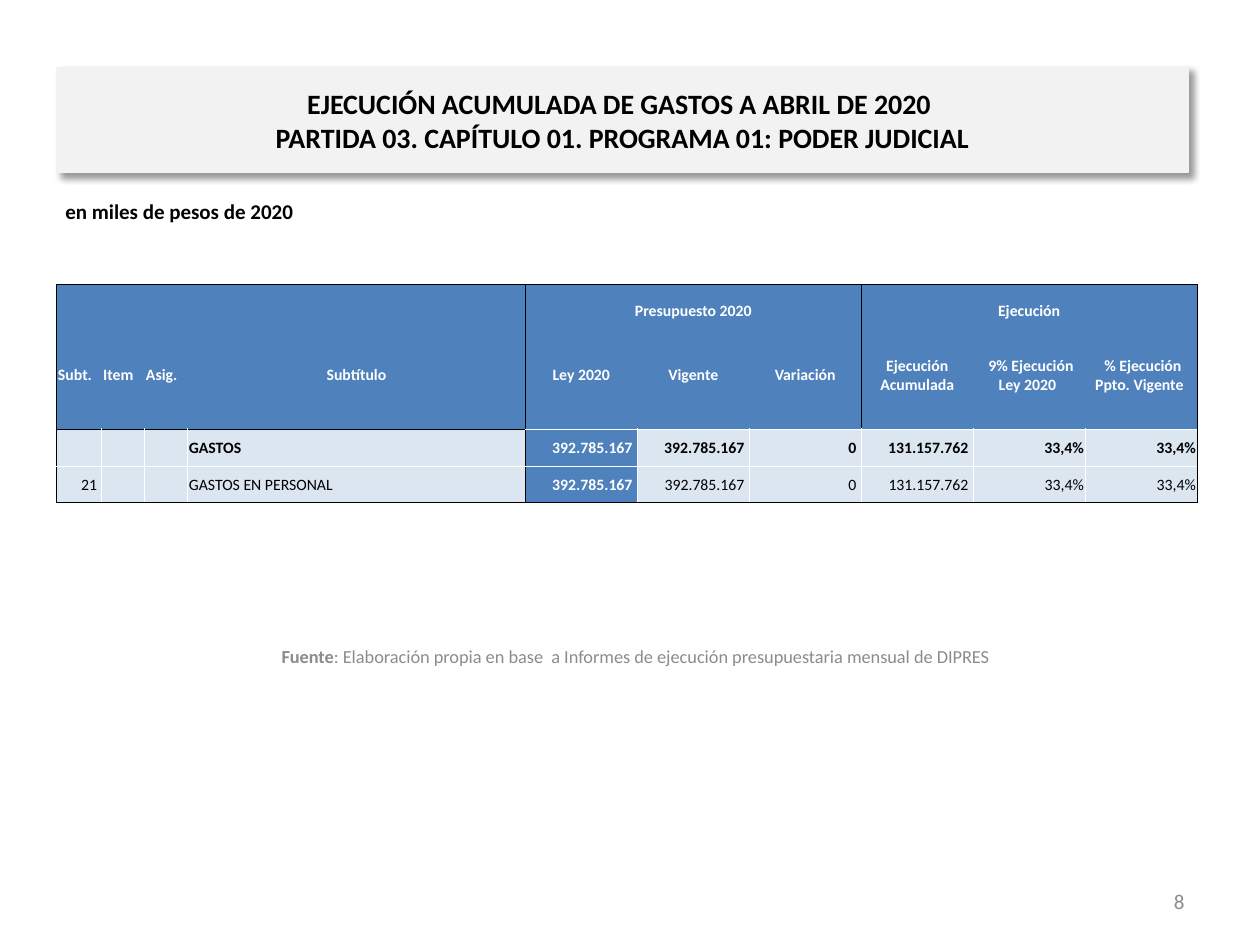
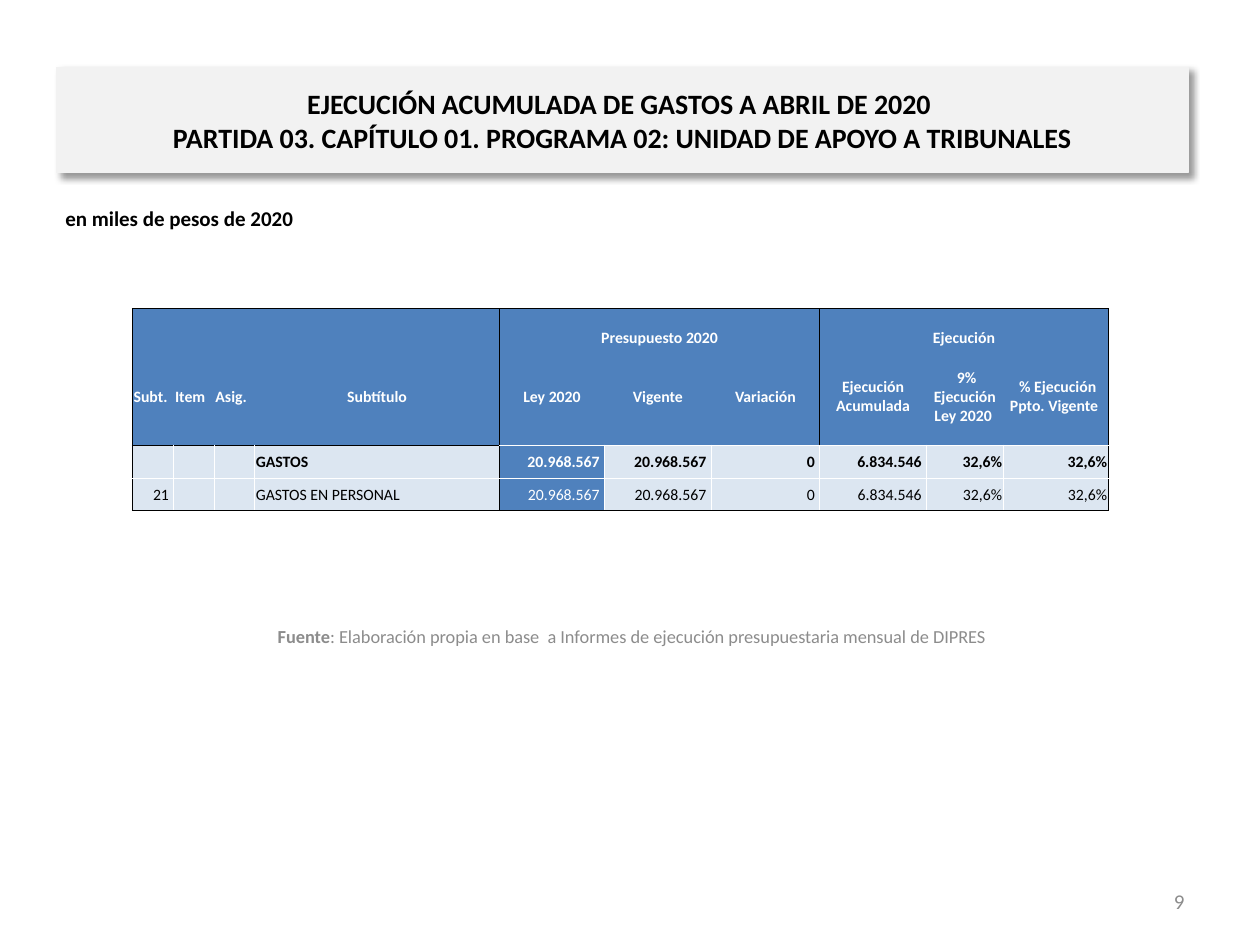
from copy import deepcopy
from dataclasses import dataclass

from lxml import etree
from pptx import Presentation
from pptx.dml.color import RGBColor
from pptx.enum import text
from pptx.oxml.ns import qn
from pptx.util import Pt

BLACK = RGBColor(0x00, 0x00, 0x00)
WHITE = RGBColor(0xFF, 0xFF, 0xFF)
GRAY = RGBColor(0x8C, 0x8C, 0x8C)
BAND = RGBColor(0xF2, 0xF2, 0xF2)
BLUE = RGBColor(0x4F, 0x81, 0xBD)
PALE_BLUE = RGBColor(0xDC, 0xE6, 0xF1)

LEFT, CENTER, RIGHT = (text.PP_ALIGN.LEFT, text.PP_ALIGN.CENTER, text.PP_ALIGN.RIGHT)
TOP, MIDDLE, BOTTOM = (text.MSO_ANCHOR.TOP, text.MSO_ANCHOR.MIDDLE,
                       text.MSO_ANCHOR.BOTTOM)

TITLE_START = "EJECUCIÓN ACUMULADA DE GASTOS A ABRIL DE 2020 "
UNITS = "en miles de pesos de 2020"
SOURCE = ": Elaboración propia en base  a Informes de ejecución presupuestaria mensual de DIPRES"
GROUPS = {4: "Presupuesto 2020", 7: "Ejecución"}
HEADINGS = ["Subt.", "Item", "Asig.", "Subtítulo", "Ley 2020", "Vigente", "Variación",
            "Ejecución Acumulada", " 9% Ejecución Ley 2020 ", " % Ejecución Ppto. Vigente "]
HEADER_ROWS = 2
NAME_COLUMN, LAW_COLUMN, EXECUTION_COLUMN, PERCENT_COLUMN = 3, 4, 7, 8

UNITS_STYLE = {"size": Pt(12), "bold": True, "color": BLACK}
TITLE_STYLE = {"size": Pt(16), "bold": True, "color": BLACK}
SOURCE_STYLE = {"size": Pt(10.5), "bold": False, "color": GRAY}
NUMBER_STYLE = {"size": Pt(12), "bold": False, "color": GRAY}
CELL_SIZE = 9


@dataclass
class Area:
    left: float
    top: float
    width: float
    height: float

    def lengths(self) -> list[int]:
        return [Pt(self.left), Pt(self.top), Pt(self.width), Pt(self.height)]


@dataclass
class Program:
    """One budget programme and the layout of its slide."""
    name: str
    number: str
    budget: str
    spent: str
    percent: str
    bold_law: bool
    units_top: float
    source_left: float
    source_top: float
    table_left: float
    table_top: float
    columns: list[float]
    rows: list[float]

    def values(self) -> list[list[str]]:
        amounts = [self.budget, self.budget, "0", self.spent, self.percent, self.percent]
        header = [GROUPS.get(col, "") for col in range(len(HEADINGS))]
        return [header, HEADINGS,
                ["", "", "", "GASTOS", *amounts],
                ["21", "", "", "GASTOS EN PERSONAL", *amounts]]


PROGRAMS = [
    Program("PARTIDA 03. CAPÍTULO 01. PROGRAMA 01: PODER JUDICIAL", "8",
            "392.785.167", "131.157.762", "33,4%", True,
            units_top=110.16, source_left=32.4, source_top=360.72,
            table_left=32.4, table_top=162.72,
            columns=[25.8, 24.5, 24.5, 193] + [64] * 6,
            rows=[20.4, 62, 21.4, 20.5]),
    Program("PARTIDA 03. CAPÍTULO 01. PROGRAMA 02: UNIDAD DE APOYO A TRIBUNALES", "9",
            "20.968.567", "6.834.546", "32,6%", False,
            units_top=113.76, source_left=30.24, source_top=349.2,
            table_left=75.6, table_top=176.4,
            columns=[23.7, 23.1, 23.1, 140, 60, 61, 62, 61, 44, 60],
            rows=[22.3, 55.6, 19, 18.3]),
]


def format_span(span, style: dict) -> None:
    span.font.name = "Calibri"
    for key, value in style.items():
        if key == "color":
            span.font.color.rgb = value
        else:
            setattr(span.font, key, value)


def add_label(page, area: Area, spans: list[tuple[str, dict]], align, anchor) -> None:
    frame = page.shapes.add_textbox(*area.lengths()).text_frame
    frame.word_wrap = True
    frame.vertical_anchor = anchor
    para = frame.paragraphs[0]
    para.alignment = align
    for words, style in spans:
        span = para.add_run()
        span.text = words
        format_span(span, style)


def add_shadow(box) -> None:
    effects = etree.SubElement(box.element.spPr, qn("a:effectLst"))
    shadow = etree.SubElement(effects, qn("a:outerShdw"), blurRad=str(Pt(4)),
                              dist=str(Pt(3)), dir=str(45 * 60000), algn="tl",
                              rotWithShape="0")
    color = etree.SubElement(shadow, qn("a:srgbClr"), val=str(BLACK))
    etree.SubElement(color, qn("a:alpha"), val="40000")


def set_title(page, name: str) -> None:
    box = page.shapes.title
    box.left, box.top, box.width, box.height = Area(32.4, 45.36, 646.56, 46.8).lengths()
    box.fill.solid()
    box.fill.fore_color.rgb = BAND
    box.line.color.rgb = BAND
    box.line.width = Pt(0.75)
    add_shadow(box)
    frame = box.text_frame
    settings = {"word_wrap": True, "vertical_anchor": MIDDLE,
                "auto_size": text.MSO_AUTO_SIZE.SHAPE_TO_FIT_TEXT,
                "margin_left": Pt(7.9), "margin_right": Pt(7.9),
                "margin_top": Pt(3.6), "margin_bottom": Pt(3.6)}
    for key, value in settings.items():
        setattr(frame, key, value)
    para = frame.paragraphs[0]
    para.text = f"{TITLE_START}\v{name}"
    para.alignment = CENTER
    for span in para.runs:
        format_span(span, TITLE_STYLE)
    # The line break needs the size of the words around it.
    line_break = para._p.find(qn("a:br"))
    line_break.append(deepcopy(para.runs[0]._r.find(qn("a:rPr"))))


def vertical_edge(row: int, edge: int) -> RGBColor | None:
    header = row < HEADER_ROWS
    if edge in (0, LAW_COLUMN, len(HEADINGS)) or (header and edge == EXECUTION_COLUMN):
        return BLACK
    return None if header else WHITE


def horizontal_edge(edge: int, col: int, last: int) -> RGBColor | None:
    if edge in (0, last) or (edge == HEADER_ROWS and col < LAW_COLUMN):
        return BLACK
    return WHITE if edge >= HEADER_ROWS else None


def set_borders(cell, row: int, col: int, row_count: int) -> None:
    edges = {"a:lnL": vertical_edge(row, col),
             "a:lnR": vertical_edge(row, col + cell.span_width),
             "a:lnT": horizontal_edge(row, col, row_count),
             "a:lnB": horizontal_edge(row + 1, col, row_count)}
    properties = cell._tc.get_or_add_tcPr()
    for tag, color in edges.items():
        line = etree.SubElement(properties, qn(tag), w=str(Pt(0.5)))
        if color is None:
            etree.SubElement(line, qn("a:noFill"))
        else:
            fill = etree.SubElement(line, qn("a:solidFill"))
            etree.SubElement(fill, qn("a:srgbClr"), val=str(color))


def cell_align(row: int, col: int):
    if col == NAME_COLUMN:
        return CENTER if row < HEADER_ROWS else LEFT
    if row < HEADER_ROWS:
        return LEFT if col < NAME_COLUMN else CENTER
    return RIGHT


def fill_cell(cell, words: str, row: int, col: int, bold: bool) -> None:
    blue = row < HEADER_ROWS or col == LAW_COLUMN
    amount = row >= HEADER_ROWS and col < PERCENT_COLUMN and col != NAME_COLUMN
    settings = {"margin_left": Pt(0.75), "margin_right": Pt(2.75 if amount else 0.75),
                "margin_top": Pt(0.75), "margin_bottom": Pt(0),
                "vertical_anchor": MIDDLE if row else BOTTOM}
    for key, value in settings.items():
        setattr(cell, key, value)
    cell.fill.solid()
    cell.fill.fore_color.rgb = BLUE if blue else PALE_BLUE
    para = cell.text_frame.paragraphs[0]
    para.alignment = cell_align(row, col)
    if words:
        span = para.add_run()
        span.text = words
        format_span(span, {"size": Pt(CELL_SIZE), "bold": bold,
                           "color": WHITE if blue else BLACK})
    else:
        etree.SubElement(para._p, qn("a:endParaRPr"), sz=str(CELL_SIZE * 100))


def add_budget_table(page, program: Program) -> None:
    values = program.values()
    area = Area(program.table_left, program.table_top,
                sum(program.columns), sum(program.rows))
    table = page.shapes.add_table(len(values), len(HEADINGS), *area.lengths()).table
    for column, width in zip(table.columns, program.columns):
        column.width = Pt(width)
    for line, height in zip(table.rows, program.rows):
        line.height = Pt(height)
    for col in GROUPS:
        table.cell(0, col).merge(table.cell(0, col + 2))
    for row, line in enumerate(values):
        for col, words in enumerate(line):
            cell = table.cell(row, col)
            set_borders(cell, row, col, len(values))
            bold = row <= HEADER_ROWS or (col == LAW_COLUMN and program.bold_law)
            fill_cell(cell, words, row, col, bold)


def add_program_slide(deck, program: Program) -> None:
    page = deck.slides.add_slide(deck.slide_layouts[5])
    set_title(page, program.name)
    add_label(page, Area(program.source_left, program.source_top, 661.68, 28.8),
              [("Fuente", SOURCE_STYLE | {"bold": True}), (SOURCE, SOURCE_STYLE)],
              CENTER, MIDDLE)
    add_label(page, Area(516.24, 500.4, 167.76, 28.8),
              [(program.number, NUMBER_STYLE)], RIGHT, MIDDLE)
    add_label(page, Area(30.24, program.units_top, 648, 36),
              [(UNITS, UNITS_STYLE)], LEFT, TOP)
    add_budget_table(page, program)


def main() -> None:
    deck = Presentation()
    deck.slide_width, deck.slide_height = Pt(720), Pt(540)
    for program in PROGRAMS:
        add_program_slide(deck, program)
    deck.save("out.pptx")


if __name__ == "__main__":
    main()
